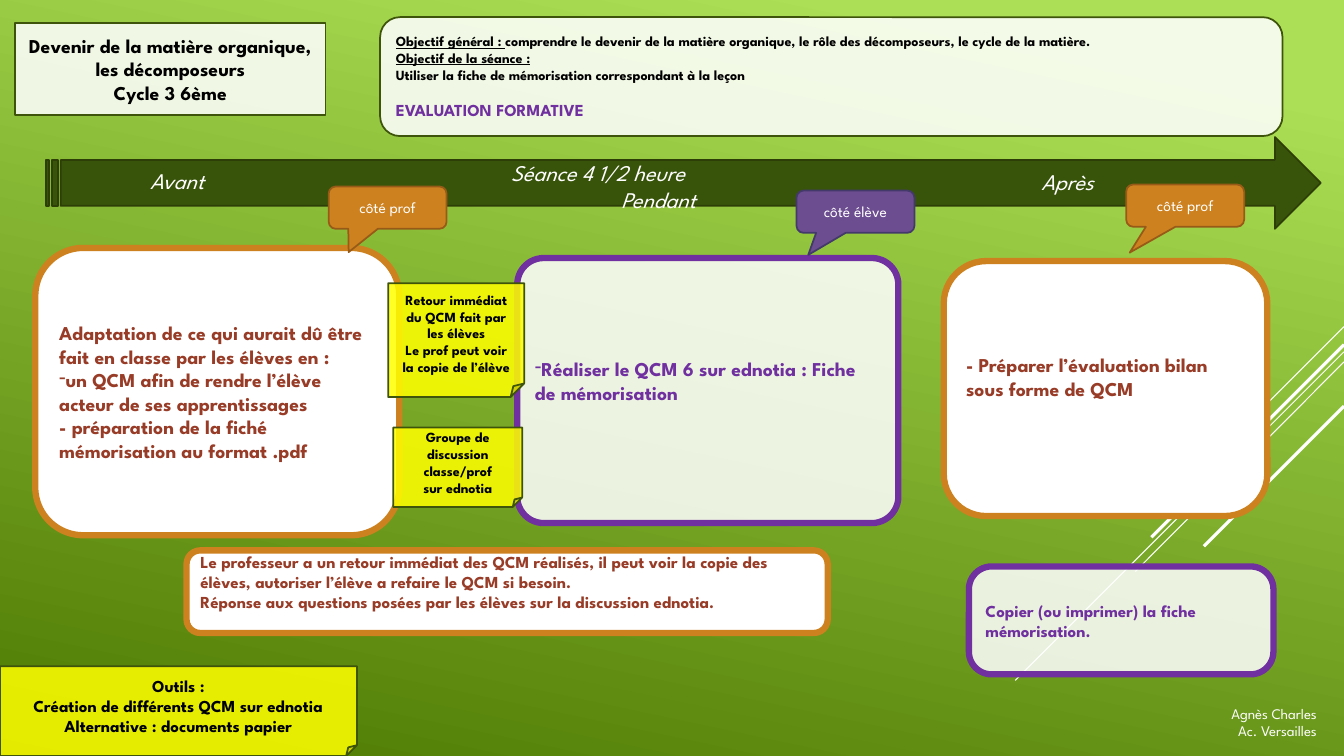
"""Build the lesson timeline slide on organic matter and decomposers."""
from lxml.etree import SubElement
from pptx import Presentation
from pptx.dml.color import RGBColor
from pptx.enum.shapes import MSO_CONNECTOR, MSO_SHAPE as Kind
from pptx.enum.text import MSO_ANCHOR, MSO_AUTO_SIZE, PP_ALIGN as Align
from pptx.oxml.ns import qn
from pptx.util import Inches, Pt

FONT = "League Spartan"
HUES = {
    "light": "ACDF55", "deep": "4C7800", "white": "FFFFFF", "black": "000000",
    "arrow": "38540A", "rim": "2E3E07", "edge": "3E540A", "note": "FFFF00",
    "orange": "CD811F", "rust": "985B17", "brick": "983C27",
    "violet": "7030A0", "plum": "6C4D90", "dusk": "43396B",
}
CARD = {"size": 14, "hue": "brick", "bold": True}
TASK = {"size": 14, "hue": "violet", "bold": True}
NOTE = {"size": 10, "hue": "black", "bold": True, "align": Align.CENTER}
STEP = {"size": 16, "hue": "white", "italic": True}
TAG = {"size": 11, "hue": "white", "align": Align.CENTER}
SIGN = {"size": 10.5, "hue": "white", "align": Align.RIGHT}
RAYS = [
    ((13.33, 3.24), (12.33, 4.24), 0.75), ((13.33, 3.49), (10.07, 6.75), 0.75),
    ((13.33, 3.59), (11.26, 5.67), 0.75), ((13.33, 3.42), (11.42, 5.33), 2.25),
    ((13.33, 4.03), (11.94, 5.42), 2.25),
]


def tint(name):
    return RGBColor.from_string(HUES[name])


def place(shape, box):
    for key, value in zip(("left", "top", "width", "height"), box):
        setattr(shape, key, Inches(value))


def style(run, size, hue, **flags):
    run.font.name, run.font.size = FONT, Pt(size)
    run.font.color.rgb = tint(hue)
    for key, value in flags.items():
        setattr(run.font, key, value)


def write(shape, lines, size, hue, align=Align.LEFT, foot=0.05, **flags):
    frame = shape.text_frame
    form = {"word_wrap": True, "auto_size": MSO_AUTO_SIZE.NONE,
            "margin_bottom": Inches(foot)}
    for key, value in form.items():
        setattr(frame, key, value)
    for i, line in enumerate(lines):
        para = frame.paragraphs[0] if i == 0 else frame.add_paragraph()
        para.alignment = align
        run = para.add_run()
        run.text = line
        style(run, size, hue, **flags)
    return frame.paragraphs


def dash(para):
    props = para._p.get_or_add_pPr()
    props.set("marL", "0")
    props.set("indent", "0")
    SubElement(props, qn("a:buChar")).set("char", "-")


def paint(shape, fill, line, width, alpha=100):
    shape.fill.solid()
    shape.fill.fore_color.rgb = tint(fill)
    if alpha < 100:
        color = shape._element.spPr.find(".//" + qn("a:srgbClr"))
        SubElement(color, qn("a:alpha")).set("val", str(alpha * 1000))
    shape.line.color.rgb = tint(line)
    shape.line.width = Pt(width)
    shape.shadow.inherit = False


def bend(shape, adj):
    guides = shape._element.spPr.find(".//" + qn("a:avLst"))
    guides.clear()
    for i, value in enumerate(adj, 1):
        guide = SubElement(guides, qn("a:gd"))
        guide.set("name", f"adj{i}" if len(adj) > 1 else "adj")
        guide.set("fmla", f"val {round(value * 100000)}")


def add(slide, kind, box, fill, line, width=1.25, alpha=100, adj=()):
    shape = slide.shapes.add_shape(kind, *map(Inches, box))
    if adj:
        bend(shape, adj)
    paint(shape, fill, line, width, alpha)
    shape.text_frame.vertical_anchor = MSO_ANCHOR.MIDDLE
    return shape


def panel(slide, box, line, adj=()):
    alpha = 86 if line == "violet" else 100
    return add(slide, Kind.ROUNDED_RECTANGLE, box, "white", line, 4.5, alpha, adj)


def note(slide, box, lines, size=10):
    shape = add(slide, Kind.FOLDED_CORNER, box, "note", "edge", alpha=86, adj=[0.12])
    write(shape, lines, **{**NOTE, "size": size})


def tag(slide, spot, text, fill, line, tip):
    shape = add(slide, Kind.ROUNDED_RECTANGULAR_CALLOUT, (*spot, 1.17, 0.42),
                fill, line, adj=(*tip, 0.17))
    write(shape, [text], **TAG)


def label(slide, box, lines, form):
    return write(slide.shapes.add_textbox(*map(Inches, box)), lines, **form)


def ray(slide, start, end, width):
    line = slide.shapes.add_connector(MSO_CONNECTOR.STRAIGHT, *map(Inches, start + end))
    line.line.color.rgb = tint("white")
    line.line.width = Pt(width)
    SubElement(line._element.spPr, qn("a:effectLst"))


def backdrop(slide):
    fill = slide.background.fill
    fill.gradient()
    fill.gradient_angle = 258
    for stop, name, spot in zip(fill.gradient_stops, ("light", "deep"), (0.1, 1)):
        stop.color.rgb, stop.position = tint(name), spot
    for item in RAYS:
        ray(slide, *item)


def heading(slide):
    title = slide.shapes.title
    place(title, (0.15, 0.23, 3.08, 0.91))
    geom = SubElement(title._element.spPr, qn("a:prstGeom"))
    geom.set("prst", "roundRect")
    SubElement(geom, qn("a:avLst"))
    paint(title, "white", "edge", 1.25, 86)
    title.text_frame.vertical_anchor = MSO_ANCHOR.MIDDLE
    write(title, ["Devenir de la matière organique,", "les décomposeurs",
                  "Cycle 3 6ème"], **{**NOTE, "size": 14})


def goals(slide):
    shape = add(slide, Kind.ROUNDED_RECTANGLE, (3.77, 0.17, 8.95, 1.18),
                "white", "edge", alpha=86)
    paras = write(shape, ["Objectif général : ", "Objectif de la séance :",
                          "Utiliser la fiche de mémorisation correspondant à la leçon",
                          "EVALUATION FORMATIVE"], 10, "black", bold=True)
    for para in paras[:2]:
        para.runs[0].font.underline = True
    run = paras[0].add_run()
    run.text = ("comprendre le devenir de la matière organique, "
                "le rôle des décomposeurs, le cycle de la matière.")
    style(run, 10, "black", bold=True)
    style(paras[3].runs[0], 12, "violet")
    paras[3].space_before = Pt(12)


def steps(slide):
    add(slide, Kind.STRIPED_RIGHT_ARROW, (0.46, 1.36, 12.64, 0.91), "arrow", "rim")
    label(slide, (1.39, 1.61, 1.01, 0.37), ["Avant"], STEP)
    paras = label(slide, (4.97, 1.53, 3.12, 0.64),
                  ["Séance 4 1/2 heure", "Pendant"], STEP)
    paras[1].alignment = Align.CENTER
    label(slide, (10.23, 1.62, 0.89, 0.37), ["Après"], STEP)


def panels(slide):
    before = write(panel(slide, (0.35, 2.46, 3.61, 2.85), "orange"), [
        "Adaptation de ce qui aurait dû être fait en classe par les élèves en :",
        "un QCM afin de rendre l’élève acteur de ses apprentissages",
        "- préparation de la fiché mémorisation au format .pdf"], **CARD)
    dash(before[1])
    during = write(panel(slide, (5.13, 2.56, 3.78, 2.63), "violet", [0.1]), [
        "Réaliser le QCM 6 sur ednotia : Fiche de mémorisation"], foot=0.25, **TASK)
    dash(during[0])
    write(panel(slide, (9.36, 2.59, 3.21, 2.53), "orange"), [
        "- Préparer l’évaluation bilan sous forme de QCM"], foot=0.28, **CARD)
    write(panel(slide, (1.85, 5.46, 6.36, 0.82), "orange"), [
        "Le professeur a un retour immédiat des QCM réalisés, il peut voir la copie "
        "des élèves, autoriser l’élève a refaire le QCM si besoin.",
        "Réponse aux questions posées par les élèves sur la discussion ednotia."],
        foot=0.25, **{**CARD, "size": 12})
    write(panel(slide, (9.61, 5.62, 3.02, 1.07), "violet", [0.21]), [
        "Copier (ou imprimer) la fiche mémorisation."], **{**TASK, "size": 12})


def main():
    deck = Presentation()
    deck.slide_width, deck.slide_height = Inches(13.33), Inches(7.5)
    slide = deck.slides.add_slide(deck.slide_layouts[5])
    for step in (backdrop, heading, goals, steps, panels):
        step(slide)
    note(slide, (0, 6.61, 3.54, 0.89), [
        "Outils :", "Création de différents QCM sur ednotia",
        "Alternative : documents papier"], 12)
    note(slide, (3.85, 2.81, 1.35, 1.13), [
        "Retour immédiat du QCM fait par les élèves",
        "Le prof peut voir la copie de l’élève"])
    note(slide, (3.9, 4.24, 1.28, 0.79), [
        "Groupe de discussion classe/prof", "sur ednotia"])
    tag(slide, (3.26, 1.85), "côté prof", "orange", "rust", (-0.33, 1.05))
    tag(slide, (11.17, 1.83), "côté prof", "orange", "rust", (-0.47, 1.11))
    tag(slide, (7.9, 1.89), "côté élève", "plum", "dusk", (-0.4, 1.02))
    label(slide, (11.68, 6.94, 1.48, 0.47), ["Agnès Charles", "Ac. Versailles"], SIGN)
    deck.save("out.pptx")


if __name__ == "__main__":
    main()
